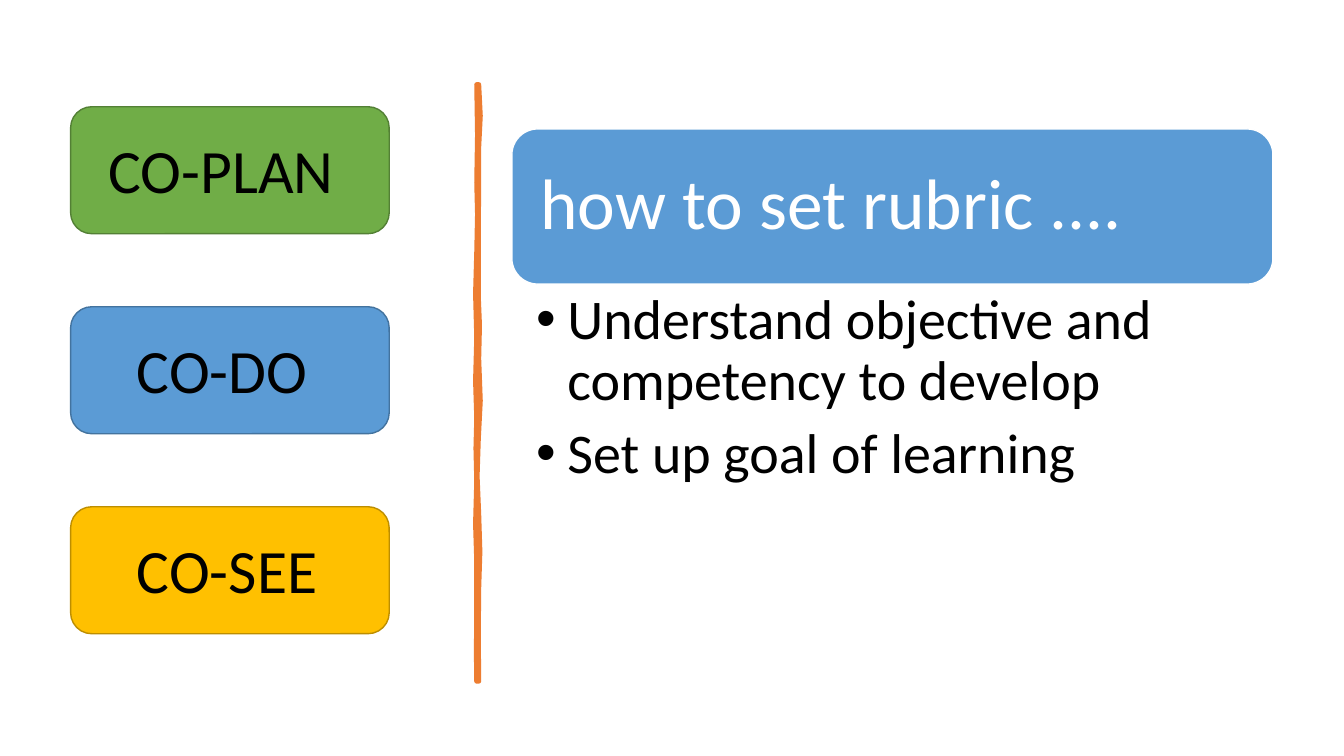
"""Build the co-plan, co-do, co-see slide on setting a rubric."""
from lxml import etree
from pptx import Presentation
from pptx.dml.color import RGBColor
from pptx.enum.shapes import MSO_SHAPE
from pptx.enum.text import MSO_ANCHOR, PP_ALIGN
from pptx.oxml.ns import qn
from pptx.util import Cm, Pt

BLACK = RGBColor(0x00, 0x00, 0x00)
WHITE = RGBColor(0xFF, 0xFF, 0xFF)
BLUE = RGBColor(0x5B, 0x9B, 0xD5)
DARK_BLUE = RGBColor(0x43, 0x73, 0x9E)
GREEN = RGBColor(0x70, 0xAD, 0x47)
DARK_GREEN = RGBColor(0x53, 0x80, 0x35)
GOLD = RGBColor(0xFF, 0xC0, 0x00)
DARK_GOLD = RGBColor(0xBD, 0x8E, 0x00)
ORANGE = RGBColor(0xED, 0x7D, 0x31)


def paint(shape, fill, line, width=1):
    shape.shadow.inherit = False
    shape.fill.solid()
    shape.fill.fore_color.rgb = fill
    shape.line.color.rgb = line
    shape.line.width = Pt(width)


def write(paragraph, text, size, color):
    paragraph.alignment = PP_ALIGN.LEFT
    run = paragraph.add_run()
    run.text = text
    run.font.name = "Calibri"
    run.font.size = Pt(size)
    run.font.color.rgb = color


prs = Presentation()
prs.slide_width, prs.slide_height = Cm(33.87), Cm(19.05)
slide = prs.slides.add_slide(prs.slide_layouts[6])
shapes = slide.shapes

right_edge = [
    (12.07, 2.13), (12.11, 2.92), (12.07, 3.71), (12.07, 4.7), (12.06, 5.74),
    (12.06, 7.47), (12.09, 8.2), (12.07, 9.04), (12.11, 10.1), (12.06, 11.07),
    (12.03, 12), (12.07, 12.95), (12.1, 13.9), (12.07, 14.83), (12.06, 16),
    (12.07, 17.17),
]
left_edge = [
    (12.01, 17.17), (12, 16.4), (12.01, 15.57), (12.01, 14.15), (11.98, 13.2),
    (12.01, 12.12), (11.99, 11.3), (12.01, 10.54), (11.98, 9.6), (12.01, 8.51),
    (11.98, 7.4), (12.01, 6.35), (12.03, 5.4), (12.01, 4.6), (12.03, 3.4),
    (12.01, 2.13),
]
outline = [(Cm(x), Cm(y)) for x, y in right_edge + left_edge]
builder = shapes.build_freeform(*outline[0])
builder.add_line_segments(outline[1:], close=True)
divider = builder.convert_to_shape()
paint(divider, ORANGE, ORANGE, 3.25)
etree.SubElement(divider.line._get_or_add_ln(), qn("a:round"))

heading = shapes.add_shape(MSO_SHAPE.ROUNDED_RECTANGLE, Cm(12.9), Cm(3.25), Cm(19.18), Cm(3.91))
paint(heading, BLUE, WHITE)
heading_text = heading.text_frame
heading_text.vertical_anchor = MSO_ANCHOR.MIDDLE
heading_text.margin_left = heading_text.margin_right = Cm(0.53)
heading_text.paragraphs[0].line_spacing = 0.9
write(heading_text.paragraphs[0], "how to set rubric ....", 51, WHITE)

steps = shapes.add_textbox(Cm(12.9), Cm(7.16), Cm(19.18), Cm(8.51)).text_frame
steps.word_wrap = True
steps.margin_left, steps.margin_right = Cm(0.61), Cm(1.02)
steps.margin_top = steps.margin_bottom = Cm(0.18)
for index, step in enumerate(["Understand objective and competency to develop", "Set up goal of learning"]):
    paragraph = steps.add_paragraph() if index else steps.paragraphs[0]
    paragraph.line_spacing = 0.9
    paragraph.space_after = Pt(9)
    write(paragraph, step, 40, BLACK)
    properties = paragraph._p.get_or_add_pPr()
    properties.set("marL", str(Cm(0.79)))
    properties.set("indent", str(-Cm(0.79)))
    etree.SubElement(properties, qn("a:buFont"), typeface="Arial")
    etree.SubElement(properties, qn("a:buChar"), char="•")

stages = [
    ("CO-PLAN", GREEN, DARK_GREEN, 2.49, 6.58),
    ("CO-DO", BLUE, DARK_BLUE, 3.2, 5.16),
    ("CO-SEE", GOLD, DARK_GOLD, 3.2, 5.51),
]
for index, (name, fill, line, label_left, label_width) in enumerate(stages):
    top = 2.69 + 5.04 * index
    card = shapes.add_shape(MSO_SHAPE.ROUNDED_RECTANGLE, Cm(1.78), Cm(top), Cm(8.03), Cm(3.2))
    paint(card, fill, line)
    label = shapes.add_textbox(Cm(label_left), Cm(top + 0.52), Cm(label_width), Cm(2.13)).text_frame
    label.word_wrap = True
    write(label.paragraphs[0], name, 44, BLACK)

prs.save("out.pptx")
